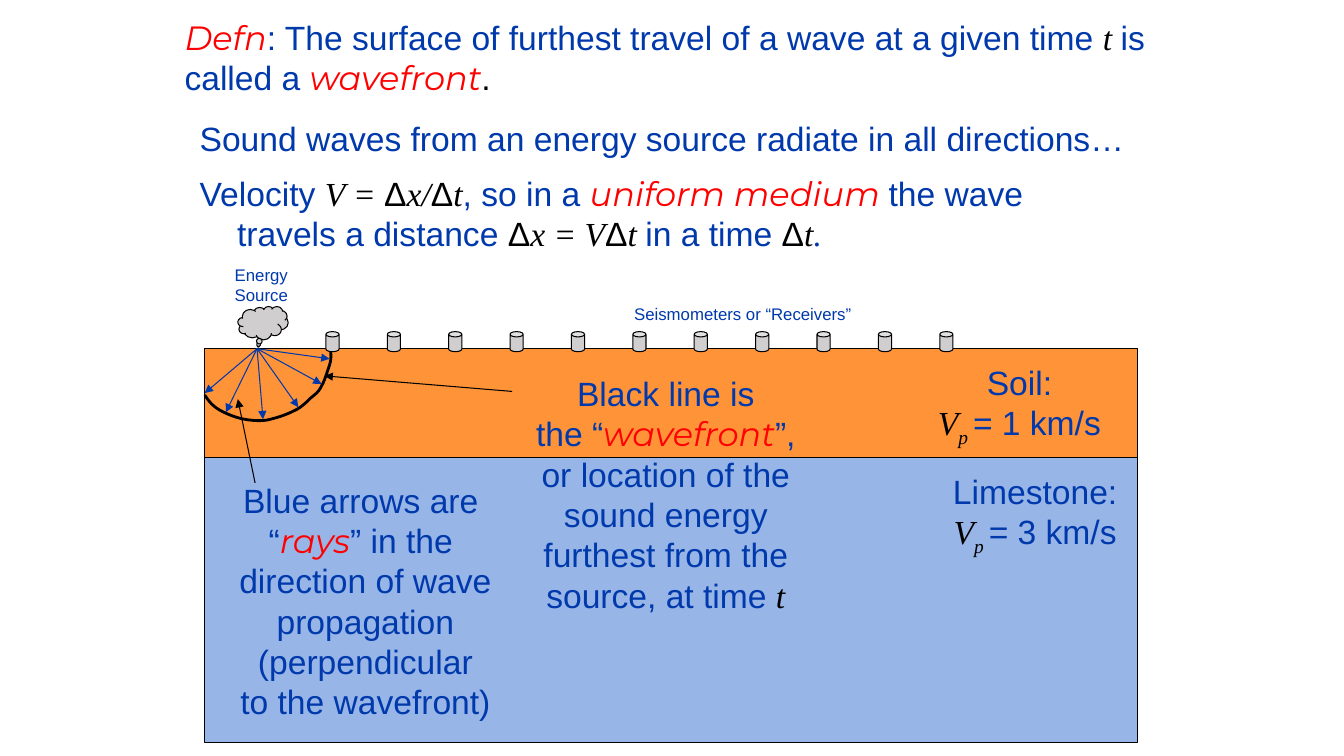
from pptx import Presentation
from pptx.dml.color import RGBColor
from pptx.enum.shapes import MSO_CONNECTOR, MSO_SHAPE
from pptx.enum.text import MSO_ANCHOR, MSO_AUTO_SIZE as AUTO, PP_ALIGN as ALIGN
from pptx.oxml.ns import qn
from pptx.util import Pt
from lxml.etree import SubElement

COLORS = {"blue": "0039AC", "red": "FF0000", "black": "000000",
          "soil": "FF9338", "limestone": "97B5E6", "gray": "D0CECE"}

# Run styles: font, colour, italic, baseline shift
STYLES = {
    "text": ("Arial", "blue", False, 0),
    "key": ("Montserrat", "red", True, 0),
    "math": ("Times New Roman", "black", True, 0),
    "sub": ("Times New Roman", "black", True, -25000),
    "delta": ("Arial", "black", False, 0),
    "stop": ("Times New Roman", "blue", True, 0),
}


def rgb(name):
    return RGBColor.from_string(COLORS[name])


def set_font(font, style):
    name, color, italic, shift = STYLES[style]
    font.name, font.italic = name, italic
    font.color.rgb = rgb(color)
    if shift:
        font._element.set("baseline", str(shift))


def write(tf, lines, size=24, align=ALIGN.LEFT):
    """Each line is a plain string or a list of (text, style) runs."""
    for i, line in enumerate(lines):
        p = tf.paragraphs[0] if i == 0 else tf.add_paragraph()
        p.alignment = align
        runs = [(line, "text")] if isinstance(line, str) else line
        SubElement(p._p.get_or_add_pPr(), qn("a:buNone"))
        p.font.size = Pt(size)
        if len(runs) == 1:
            set_font(p.font, runs[0][1])
        for text, style in runs:
            r = p.add_run()
            r.text = text
            if len(runs) > 1:
                set_font(r.font, style)


def place(sp, left, top, width, height):
    sp.left, sp.top, sp.width, sp.height = Pt(left), Pt(top), Pt(width), Pt(height)


def add_label(slide, box, lines, size=24, align=ALIGN.CENTER):
    tf = slide.shapes.add_textbox(*map(Pt, box)).text_frame
    tf.word_wrap = False
    tf.auto_size = AUTO.SHAPE_TO_FIT_TEXT
    write(tf, lines, size, align)


def add_solid(slide, kind, box, fill, *adjustments):
    sp = slide.shapes.add_shape(kind, *map(Pt, box))
    sp.shadow.inherit = False
    sp.fill.solid()
    sp.fill.fore_color.rgb = rgb(fill)
    sp.line.color.rgb = rgb("black")
    sp.line.width = Pt(0.75)
    for i, value in enumerate(adjustments):
        sp.adjustments[i] = value


def add_arrow(slide, start, end, color):
    line = slide.shapes.add_connector(MSO_CONNECTOR.STRAIGHT, *map(Pt, start + end))
    line.line.color.rgb = rgb(color)
    line.line.width = Pt(0.75)
    SubElement(line.line._get_or_add_ln(), qn("a:tailEnd"), type="triangle")
    SubElement(line._element.spPr, qn("a:effectLst"))


def fill_placeholder(sp, box, lines):
    place(sp, *box)
    tf = sp.text_frame
    tf.word_wrap = True
    tf.auto_size = AUTO.NONE
    tf.vertical_anchor = MSO_ANCHOR.TOP
    write(tf, lines)
    for p in tf.paragraphs:
        p.space_before = Pt(0)
        p._p.pPr.set("marL", "0")
        p._p.pPr.set("indent", "0")
    return tf.paragraphs


def add_definition(slide, box):
    fill_placeholder(slide.shapes.title, box, [
        [("Defn", "key"),
         (": The surface of furthest travel of a wave at a given time ", "text"),
         ("t ", "math"), ("is", "text")],
        [("called a ", "text"), ("wavefront", "key"), (".", "delta")],
    ])


def add_velocity(slide, box):
    paragraphs = fill_placeholder(slide.placeholders[1], box, [
        "Sound waves from an energy source radiate in all directions…",
        [("Velocity ", "text"), ("V = ", "math"), ("Δ", "delta"), ("x/", "math"),
         ("Δ", "delta"), ("t", "math"), (", so in a ", "text"),
         ("uniform medium ", "key"), ("the wave", "text")],
        [("travels a distance ", "text"), ("Δ", "delta"), ("x = V", "math"),
         ("Δ", "delta"), ("t ", "math"), ("in a time ", "text"),
         ("Δ", "delta"), ("t", "math"), (".", "stop")],
    ])
    paragraphs[1].space_before = Pt(10.5)
    paragraphs[2]._p.pPr.set("marL", str(Pt(26.7)))


def add_layers(slide, left, top, width):
    soil_height, limestone_height = 77.8, 203.8
    layers = [("Soil:", "1", "soil", 0, soil_height, 514, 5.8, 136),
              ("Limestone:", "3", "limestone", soil_height, limestone_height,
               523.4, 5.8, 139.7)]
    for name, speed, fill, dy, height, label_x, label_y, label_width in layers:
        add_solid(slide, MSO_SHAPE.RECTANGLE, (left, top + dy, width, height), fill)
        add_label(slide, (left + label_x, top + dy + label_y, label_width, 65.5), [
            name,
            [("V", "math"), ("p ", "sub"), (f"= {speed} km/s", "text")],
        ])


def add_receivers(slide, left, ground):
    count, pitch = 11, 43.85
    for i in range(count):
        add_solid(slide, MSO_SHAPE.CAN,
                  (left + i * pitch, ground - 12.2, 9.4, 14.4), "gray", 0.404)
    add_label(slide, (left + 213.1, ground - 36, 175, 21.6),
              ["Seismometers or “Receivers”"], 12, ALIGN.LEFT)


def add_wavefront(slide, x, y):
    """Draw the curve through Bezier segments, offset from the source."""
    start = (52.6, 0)
    segments = [
        ((52.6, 3.6), (53.3, 7.2), (51.8, 11.5)),
        ((50.4, 15.8), (48.2, 23), (46.1, 26.6)),
        ((43.9, 31), (41.8, 32.4), (38.2, 35.3)),
        ((35.3, 38.2), (31, 42.5), (25.9, 44.6)),
        ((20.2, 47.5), (13, 49.7), (6.5, 51.1)),
        ((0, 51.8), (-6.5, 51.1), (-12.2, 49.7)),
        ((-18, 48.2), (-24.5, 45.4), (-28.8, 42.5)),
        ((-33.1, 39.6), (-35.3, 36), (-37.4, 33.1)),
    ]
    points, steps = [start], 6
    for c1, c2, end in segments:
        begin = points[-1]
        for t in (k / steps for k in range(1, steps + 1)):
            points.append(tuple(
                (1 - t) ** 3 * a + 3 * (1 - t) ** 2 * t * b
                + 3 * (1 - t) * t ** 2 * c + t ** 3 * d
                for a, b, c, d in zip(begin, c1, c2, end)))
    points = [(Pt(x + dx), Pt(y + dy)) for dx, dy in points]
    builder = slide.shapes.build_freeform(*points[0])
    builder.add_line_segments(points[1:], close=False)
    sp = builder.convert_to_shape()
    sp.shadow.inherit = False
    sp.fill.background()
    sp.line.color.rgb = rgb("black")
    sp.line.width = Pt(2)


def add_source(slide, x, y):
    add_solid(slide, MSO_SHAPE.CLOUD_CALLOUT, (x - 13.7, y - 30.2, 36, 23.8),
              "gray", -0.094, 0.693)
    add_label(slide, (x - 23, y - 63.4, 52.6, 36), ["Energy", "Source"], 12, ALIGN.LEFT)
    # Rays
    for dx, dy in [(-37.4, 31.7), (-22.3, 45.4), (4.3, 50.4),
                   (29.5, 41.8), (46.1, 25.2), (51.8, 7.2)]:
        add_arrow(slide, (x, y), (x + dx, y + dy), "blue")


def add_explanations(slide, x, y):
    add_arrow(slide, (x + 182.2, y + 30.5), (x + 48.2, y + 19.4), "black")
    add_label(slide, (x + 182.9, y + 13.7, 218.2, 181.4), [
        "Black line is",
        [("the “", "text"), ("wavefront", "key"), ("”,", "text")],
        "or location of the", "sound energy", "furthest from the",
        [("source, at time ", "text"), ("t", "math")],
    ])
    add_label(slide, (x - 20.9, y + 90, 196.6, 181.4), [
        "Blue arrows are ",
        [("“", "text"), ("rays", "key"), ("” in the ", "text")],
        "direction of wave", "propagation", "(perpendicular", "to the wavefront)",
    ])
    add_arrow(slide, (x - 1.4, y + 95.8), (x - 13.7, y + 36), "black")


def main():
    prs = Presentation()
    prs.slide_width, prs.slide_height = Pt(960), Pt(540)
    slide = prs.slides.add_slide(prs.slide_layouts[1])
    add_definition(slide, (124.6, 8.6, 710.6, 65.5))
    add_velocity(slide, (135.4, 80.6, 715, 105.1))

    # Cross-section of the ground
    left, ground = 146.2, 249.1
    source = left + 37.4
    add_layers(slide, left, ground, 666)
    add_wavefront(slide, source, ground)
    add_receivers(slide, left + 86.6, ground)
    add_source(slide, source, ground)
    add_explanations(slide, source, ground)
    prs.save("out.pptx")


if __name__ == "__main__":
    main()
